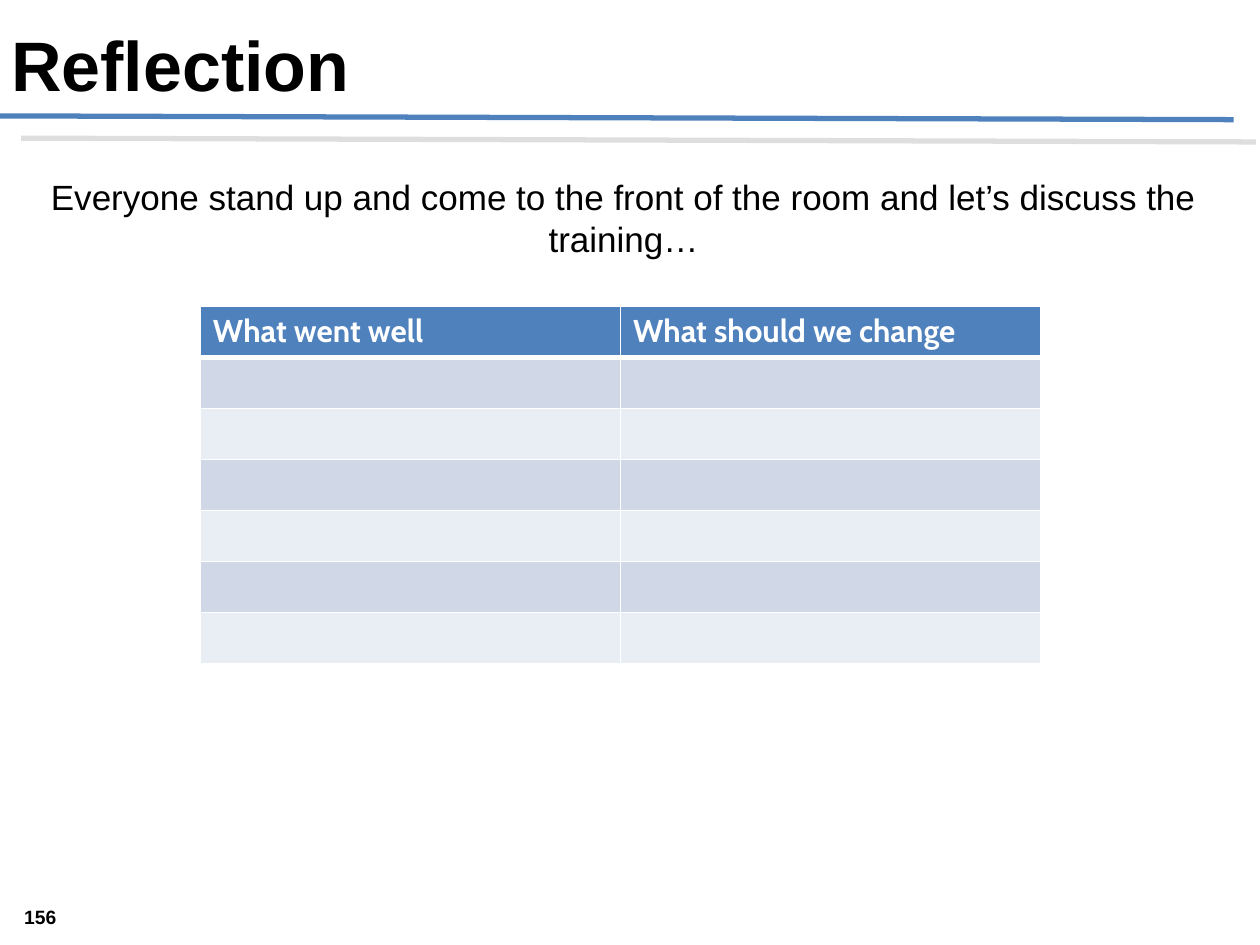
from lxml import etree
from pptx import Presentation, util as u
from pptx.dml.color import RGBColor
from pptx.enum import shapes, text
from pptx.oxml import ns

COLORS = {"blue": "4F81BD", "band": "D0D8E8", "pale": "E9EDF4",
          "white": "FFFFFF", "black": "000000", "shadow": "808080"}
HEADERS = ["What went well", "What should we change"]
BODY_ROWS = 6


def rgb(name):
    return RGBColor.from_string(COLORS[name])


def add_sub(parent, tag, **attrs):
    return etree.SubElement(parent, ns.qn(tag), attrs)


def write(tf, words, size=20, font="Arial", color="black", bold=False,
          align=text.PP_ALIGN.LEFT):
    p = tf.paragraphs[0]
    p.alignment = align
    r = p.add_run()
    r.text = words
    r.font.size, r.font.name, r.font.bold = u.Pt(size), font, bold
    r.font.color.rgb = rgb(color)


class SlideBuilder:
    """Holds the style and current slide; lengths are shares of its size."""

    def __init__(self, prs):
        self.w, self.h = prs.slide_width, prs.slide_height
        self.s = prs.slides.add_slide(prs.slide_layouts[5])

    def box(self, x, y, w, h):
        return [int(v) for v in (x * self.w, y * self.h, w * self.w, h * self.h)]

    def title(self, words, box, **fmt):
        sp = self.s.shapes.title
        sp.left, sp.top, sp.width, sp.height = self.box(*box)
        sp.text_frame.vertical_anchor = text.MSO_ANCHOR.TOP
        sp.text_frame.auto_size = text.MSO_AUTO_SIZE.SHAPE_TO_FIT_TEXT
        write(sp.text_frame, words, **fmt)

    def label(self, words, box, tight=False, **fmt):
        tf = self.s.shapes.add_textbox(*self.box(*box)).text_frame
        tf.word_wrap = True
        if tight:
            tf.margin_left = tf.margin_right = tf.margin_top = tf.margin_bottom = 0
            tf.vertical_anchor = text.MSO_ANCHOR.BOTTOM
        else:
            tf.auto_size = text.MSO_AUTO_SIZE.SHAPE_TO_FIT_TEXT
        write(tf, words, **fmt)

    def rule(self, start, end, color, width):
        line = self.s.shapes.add_connector(
            shapes.MSO_CONNECTOR.STRAIGHT, *self.box(*start, *end))
        line.line.color.rgb, line.line.width = rgb(color), u.Pt(width)
        # Offset shadow: 18 pt away at 45 degrees, 25 % opaque
        effects = add_sub(line._element.spPr, "a:effectLst")
        shadow = add_sub(effects, "a:outerShdw", blurRad="0", dist=str(u.Pt(18)),
                         dir=str(45 * 60000), algn="ctr", rotWithShape="0")
        tone = add_sub(shadow, "a:srgbClr", val=COLORS["shadow"])
        add_sub(tone, "a:alpha", val="25000")

    def borders(self, cell, **widths):
        tcPr = cell._tc.get_or_add_tcPr()
        for i, side in enumerate("LRTB"):
            ln = add_sub(tcPr, f"a:ln{side}", w=str(u.Pt(widths.get(side, 1))))
            add_sub(add_sub(ln, "a:solidFill"), "a:srgbClr", val=COLORS["white"])
            tcPr.insert(i, ln)

    def table(self, headers, body_rows, box):
        table = self.s.shapes.add_table(
            body_rows + 1, len(headers), *self.box(*box)).table
        for i, row in enumerate(table.rows):
            fill = "blue" if i == 0 else "band" if i % 2 else "pale"
            # Thick rule below the header row
            thick = {0: {"B": 3}, 1: {"T": 3}}.get(i, {})
            for j, cell in enumerate(row.cells):
                cell.fill.solid()
                cell.fill.fore_color.rgb = rgb(fill)
                self.borders(cell, **thick)
                if i == 0:
                    write(cell.text_frame, headers[j], size=18, font="Cabin",
                          color="white", bold=True)


def main():
    prs = Presentation()
    prs.slide_width, prs.slide_height = u.Inches(10), u.Inches(7.5)
    s = SlideBuilder(prs)
    center = text.PP_ALIGN.CENTER

    # Heading and rule
    s.rule((-0.001, 0.92 / 7.5), (0.979, 0.95 / 7.5), "blue", 3)
    s.title("Reflection", (-0.001, 0.12 / 7.5, 0.912, 0.77 / 7.5),
            size=40, bold=True)

    # Feedback table
    s.table(HEADERS, BODY_ROWS, (0.159, 2.43 / 7.5, 0.667, 2.84 / 7.5))

    # Prompt and page number
    s.label("Everyone stand up and come to the front of the room and let’s "
            "discuss the training…",
            (-0.01, 1.34 / 7.5, 1.01, 0.77 / 7.5), align=center)
    s.label("156", (0, 7.12 / 7.5, 0.064, 0.25 / 7.5), tight=True,
            size=11, bold=True, align=center)

    prs.save("out.pptx")


if __name__ == "__main__":
    main()
